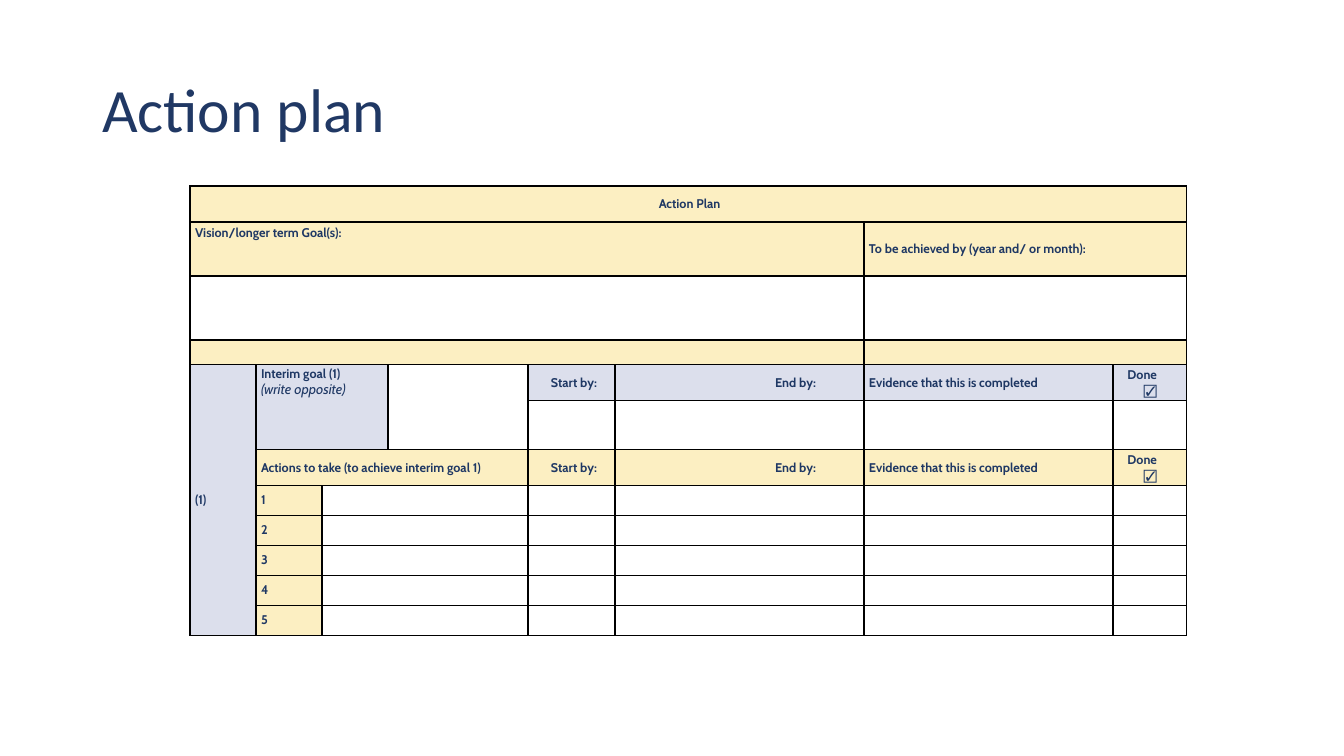
from dataclasses import dataclass

from lxml.etree import SubElement
from pptx import Presentation
from pptx.dml.color import RGBColor as RGB
from pptx.enum.text import MSO_ANCHOR as ANCHOR, MSO_AUTO_SIZE as AUTO, PP_ALIGN as ALIGN
from pptx.oxml import parse_xml
from pptx.oxml.ns import nsdecls, qn
from pptx.util import Emu, Pt


@dataclass(frozen=True)
class Theme:
    title_font: str = "Calibri"
    body_font: str = "Cabin"
    title_ink: RGB = RGB(0x20, 0x38, 0x64)
    ink: RGB = RGB(0x1F, 0x38, 0x64)
    cream: RGB = RGB(0xFC, 0xEF, 0xC2)
    lilac: RGB = RGB(0xDC, 0xDF, 0xEC)
    border: str = "000000"
    title_size: float = 44
    body_size: float = 9
    hint_size: float = 10
    tick_size: float = 9.5
    border_width: float = 1


THEME = Theme()
EMU_PER_PX = 914400 / 100.8
COLS = [66, 66, 66, 140, 87, 249, 249, 74]
ACTIONS = 5
ROWS = [36, 54, 64, 25, 36, 49, 36] + [30] * ACTIONS
GOAL_ROW, ACTIONS_ROW = 4, 6
INDENT = 5


def px(n):
    return Emu(round(n * EMU_PER_PX))


def style_run(r, size=THEME.body_size, bold=True, italic=False):
    f = r.font
    f.name, f.size, f.bold, f.italic = THEME.body_font, Pt(size), bold, italic
    f.color.rgb = THEME.ink


def add_title(slide, text, x, y, w, h):
    s = slide.shapes.title
    s.left, s.top, s.width, s.height = px(x), px(y), px(w), px(h)
    tf = s.text_frame
    tf.text = text
    tf.auto_size = AUTO.NONE
    tf.vertical_anchor = ANCHOR.MIDDLE
    p = tf.paragraphs[0]
    p.alignment, p.line_spacing = ALIGN.LEFT, 0.9
    f = p.runs[0].font
    f.name, f.size = THEME.title_font, Pt(THEME.title_size)
    f.color.rgb = THEME.title_ink


def format_blank(cell):
    """Unfilled cell with zero margins, a small empty line and thin borders."""
    cell.margin_left = cell.margin_right = cell.margin_top = cell.margin_bottom = 0
    cell.fill.background()
    end = SubElement(cell.text_frame.paragraphs[0]._p, qn("a:endParaRPr"))
    end.set("sz", str(THEME.body_size * 100))
    tc_pr = cell._tc.get_or_add_tcPr()
    for i, side in enumerate("LRTB"):
        tc_pr.insert(i, parse_xml(
            f'<a:ln{side} {nsdecls("a")} w="{Pt(THEME.border_width)}"><a:solidFill>'
            f'<a:srgbClr val="{THEME.border}"/></a:solidFill></a:ln{side}>'))


def write(cell, text, spacing, align=ALIGN.LEFT, right=0, anchor=ANCHOR.MIDDLE):
    cell.vertical_anchor = anchor
    p = cell.text_frame.paragraphs[0]
    p.text = text
    p.alignment, p.line_spacing = align, Pt(spacing)
    p_pr = p._p.get_or_add_pPr()
    p_pr.set("marL", str(px(INDENT)))
    p_pr.set("marR", str(px(right)))
    p_pr.set("indent", "0")
    for r in p.runs:
        style_run(r)
    return p


def paint(table, row, cols, color):
    for c in cols:
        fill = table.cell(row, c).fill
        fill.solid()
        fill.fore_color.rgb = color


def add_status_heads(table, row, color):
    """Start, end, evidence and done headings of one row."""
    paint(table, row, range(4, 8), color)
    write(table.cell(row, 4), "Start by:", 10.8, ALIGN.RIGHT, right=18)
    write(table.cell(row, 5), "End by:", 10.8, ALIGN.RIGHT, right=48)
    write(table.cell(row, 6), "Evidence that this is completed", 10.8)
    p = write(table.cell(row, 7), "Done ", 11.4, ALIGN.RIGHT, right=30)
    tick = p.add_run()
    tick.text = "☑"
    style_run(tick, THEME.tick_size)


def add_vision_rows(table):
    for row in (0, 1, 3):
        paint(table, row, range(len(COLS)), THEME.cream)
    table.cell(0, 0).merge(table.cell(0, 7))
    for row in (1, 2, 3):
        table.cell(row, 0).merge(table.cell(row, 5))
        table.cell(row, 6).merge(table.cell(row, 7))
    write(table.cell(0, 0), "Action Plan ", 11, ALIGN.CENTER)
    vision = table.cell(1, 0)
    vision.margin_top = px(3)
    write(vision, "Vision/longer term Goal(s):", 11, anchor=ANCHOR.TOP)
    write(table.cell(1, 6), "To be achieved by (year and/ or month):", 11)


def add_goal_rows(table):
    for row in range(GOAL_ROW, len(ROWS)):
        paint(table, row, [0], THEME.lilac)
    for row in range(GOAL_ROW, ACTIONS_ROW):
        paint(table, row, [1, 2], THEME.lilac)
    number, goal = table.cell(GOAL_ROW, 0), table.cell(GOAL_ROW, 1)
    number.merge(table.cell(len(ROWS) - 1, 0))
    goal.merge(table.cell(ACTIONS_ROW - 1, 2))
    table.cell(GOAL_ROW, 3).merge(table.cell(ACTIONS_ROW - 1, 3))
    write(number, "(1)", 10.2)
    p = write(goal, "Interim goal (1) \v(write opposite)", 12, anchor=ANCHOR.TOP)
    style_run(p.runs[1], THEME.hint_size, bold=False, italic=True)
    add_status_heads(table, GOAL_ROW, THEME.lilac)


def add_action_rows(table):
    paint(table, ACTIONS_ROW, range(1, 4), THEME.cream)
    head = table.cell(ACTIONS_ROW, 1)
    head.merge(table.cell(ACTIONS_ROW, 3))
    write(head, "Actions to take (to achieve interim goal 1)", 10.8)
    add_status_heads(table, ACTIONS_ROW, THEME.cream)
    for n in range(1, ACTIONS + 1):
        row = ACTIONS_ROW + n
        paint(table, row, [1], THEME.cream)
        table.cell(row, 2).merge(table.cell(row, 3))
        write(table.cell(row, 1), str(n), 10.2)


def add_plan_table(slide, x, y):
    frame = slide.shapes.add_table(len(ROWS), len(COLS), px(x), px(y),
                                   px(sum(COLS)), px(sum(ROWS)))
    table = frame.table
    table.first_row = table.horz_banding = False
    for col, width in zip(table.columns, COLS):
        col.width = px(width)
    for row, height in zip(table.rows, ROWS):
        row.height = px(height)
    for cell in table.iter_cells():
        format_blank(cell)
    add_vision_rows(table)
    add_goal_rows(table)
    add_action_rows(table)


def main():
    prs = Presentation()
    prs.slide_width, prs.slide_height = px(1344), px(756)
    slide = prs.slides.add_slide(prs.slide_layouts[5])
    add_title(slide, "Action plan", 92, 40, 1159, 146)
    add_plan_table(slide, 190, 186)
    prs.save("out.pptx")


if __name__ == "__main__":
    main()
